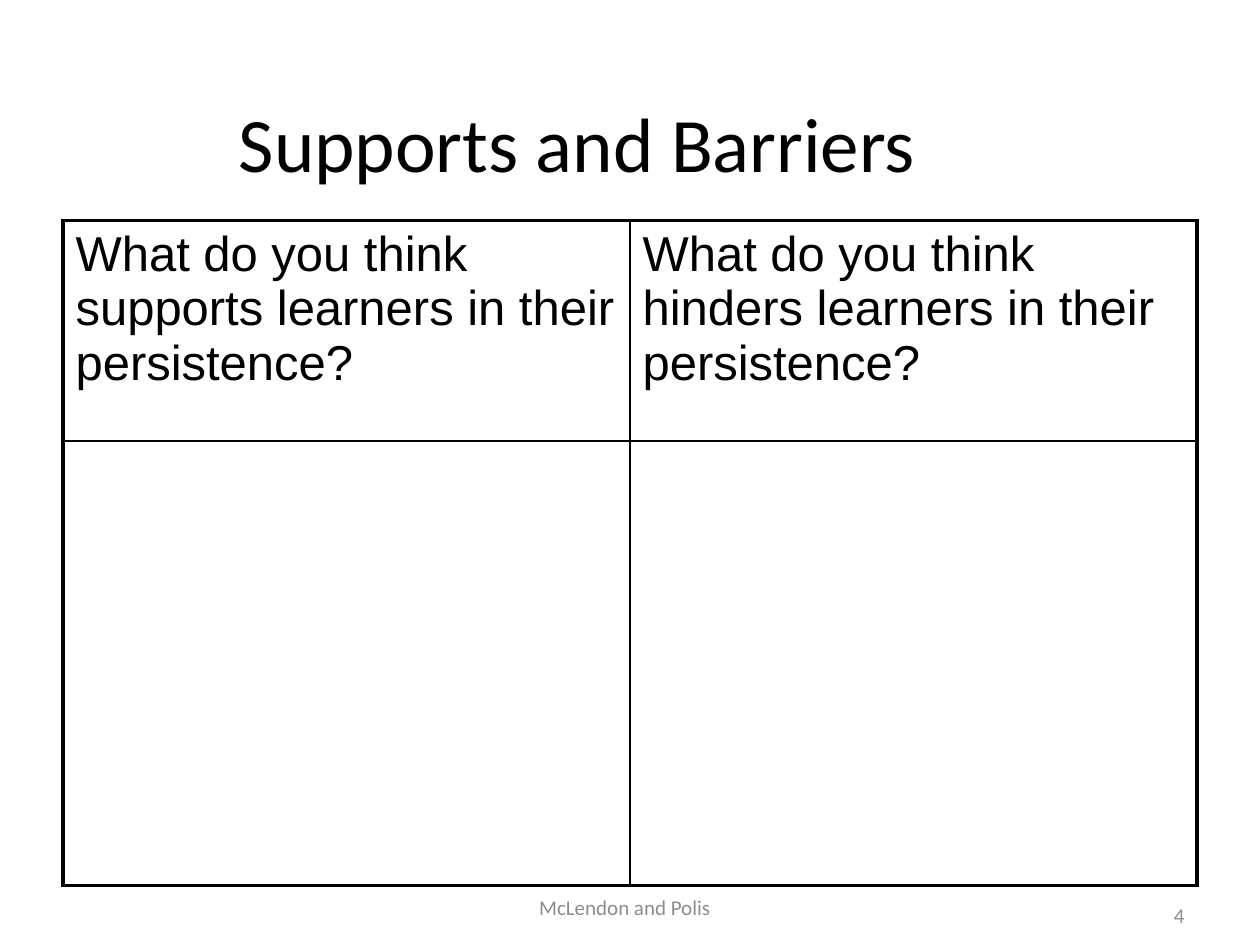
from dataclasses import dataclass

from lxml.etree import SubElement
from pptx import Presentation
from pptx.dml.color import RGBColor
from pptx.enum.text import MSO_AUTO_SIZE as AutoSize, MSO_VERTICAL_ANCHOR as Anchor, PP_ALIGN as Align
from pptx.oxml.ns import qn
from pptx.util import Pt


@dataclass(frozen=True)
class Theme:
    heading_font: str = "Calibri"
    table_font: str = "Arial"
    ink: str = "000000"
    muted: str = "8C8C8C"
    title_size: float = 44
    question_size: float = 28
    footer_size: float = 12
    outer_line: float = 2.25
    inner_line: float = 1


@dataclass(frozen=True)
class Box:
    left: float
    top: float
    width: float
    height: float

    def lengths(self) -> tuple:
        return Pt(self.left), Pt(self.top), Pt(self.width), Pt(self.height)


@dataclass(frozen=True)
class FooterItem:
    text: str
    box: Box
    align: Align


THEME = Theme()
TITLE_BOX = Box(60, 60, 540, 42)
TABLE_BOX = Box(36, 126, 648, 380)
ROW_HEIGHTS = (126, 254)
QUESTIONS = (
    "What do you think supports learners in their persistence?",
    "What do you think hinders learners in their persistence?",
)
FOOTER_ITEMS = (
    FooterItem("McLendon and Polis", Box(150, 504, 414, 28.8), Align.CENTER),
    FooterItem("4", Box(516, 513.5, 168, 19.2), Align.RIGHT),
)


def write_text(frame, text: str, *, font: str, size: float, color: str,
               align=Align.LEFT, space_before_percent: int = 0) -> None:
    paragraph = frame.paragraphs[0]
    paragraph.alignment = align
    if space_before_percent:
        spacing = SubElement(paragraph._p.get_or_add_pPr(), qn("a:spcBef"))
        SubElement(spacing, qn("a:spcPct"), val=str(space_before_percent * 1000))
    run = paragraph.add_run()
    run.text = text
    run.font.name = font
    run.font.size = Pt(size)
    run.font.color.rgb = RGBColor.from_string(color)


def prepare_frame(frame) -> None:
    frame.word_wrap = True
    frame.auto_size = AutoSize.NONE
    frame.vertical_anchor = Anchor.MIDDLE


def set_borders(cell, widths: dict[str, float]) -> None:
    properties = cell._tc.get_or_add_tcPr()
    for index, (side, width) in enumerate(widths.items()):
        line = SubElement(properties, qn(f"a:ln{side}"), w=str(Pt(width)))
        fill = SubElement(line, qn("a:solidFill"))
        SubElement(fill, qn("a:srgbClr"), val=THEME.ink)
        properties.insert(index, line)


def draw_title(slide) -> None:
    title = slide.shapes.title
    title.left, title.top, title.width, title.height = TITLE_BOX.lengths()
    prepare_frame(title.text_frame)
    write_text(title.text_frame, "Supports and Barriers", font=THEME.heading_font,
               size=THEME.title_size, color=THEME.ink, align=Align.CENTER)


def draw_footer_item(slide, item: FooterItem) -> None:
    shape = slide.shapes.add_textbox(*item.box.lengths())
    prepare_frame(shape.text_frame)
    write_text(shape.text_frame, item.text, font=THEME.heading_font,
               size=THEME.footer_size, color=THEME.muted, align=item.align)


def draw_table(slide) -> None:
    row_count, column_count = len(ROW_HEIGHTS), len(QUESTIONS)
    table = slide.shapes.add_table(row_count, column_count, *TABLE_BOX.lengths()).table
    table.first_row = False
    table.horz_banding = False
    for row, height in zip(table.rows, ROW_HEIGHTS):
        row.height = Pt(height)
    for row in range(row_count):
        for column in range(column_count):
            cell = table.cell(row, column)
            cell.fill.background()
            on_edge = {"L": column == 0, "R": column == column_count - 1,
                       "T": row == 0, "B": row == row_count - 1}
            set_borders(cell, {side: THEME.outer_line if edge else THEME.inner_line
                               for side, edge in on_edge.items()})
    for column, question in enumerate(QUESTIONS):
        write_text(table.cell(0, column).text_frame, question, font=THEME.table_font,
                   size=THEME.question_size, color=THEME.ink, space_before_percent=20)


def main() -> None:
    presentation = Presentation()
    presentation.slide_width, presentation.slide_height = Pt(720), Pt(540)
    slide = presentation.slides.add_slide(presentation.slide_layouts.get_by_name("Title Only"))
    for item in FOOTER_ITEMS:
        draw_footer_item(slide, item)
    draw_title(slide)
    draw_table(slide)
    presentation.save("out.pptx")


if __name__ == "__main__":
    main()
